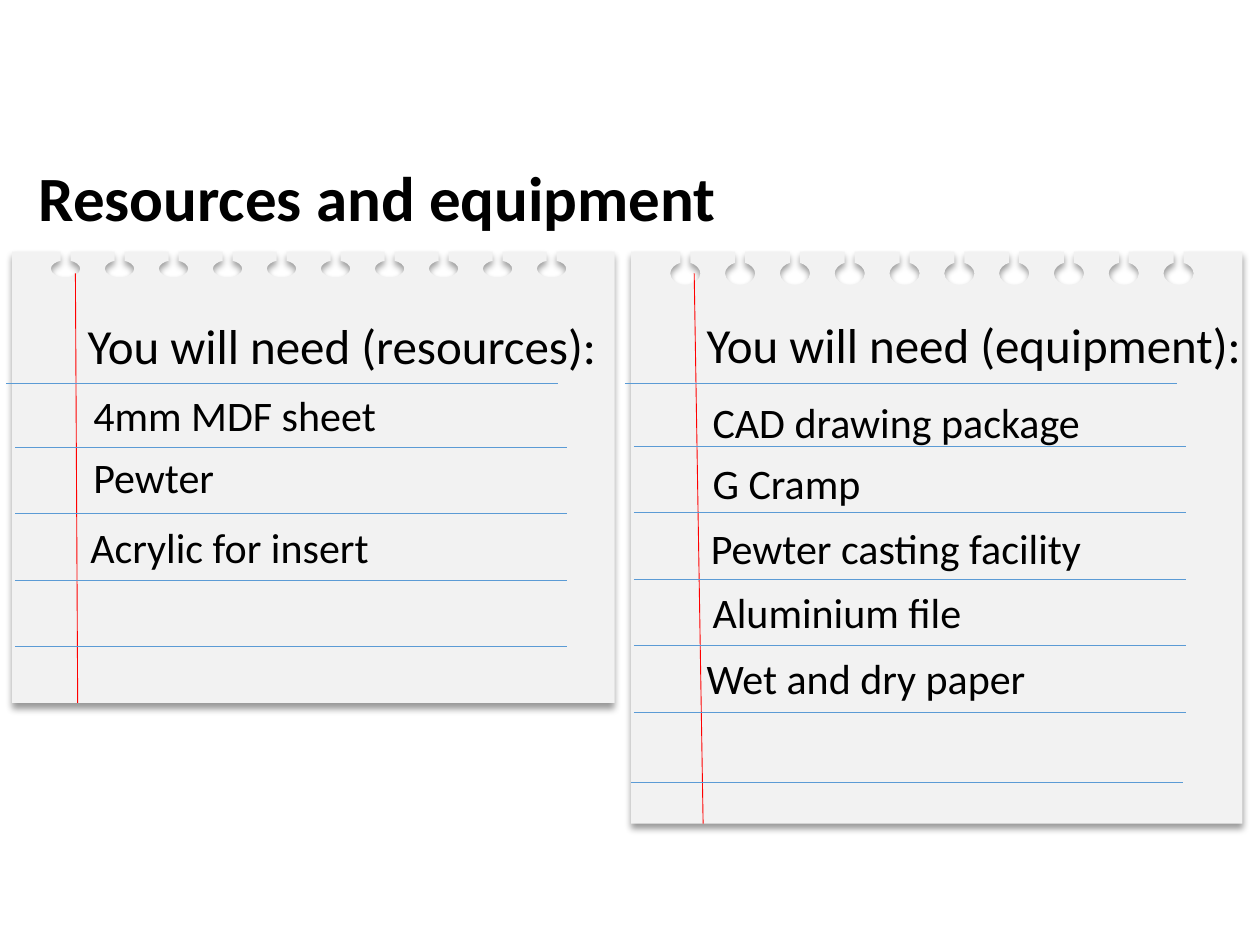
from pptx import Presentation
from pptx import util as u
from pptx.dml.color import RGBColor
from pptx.enum import shapes, text
from pptx.oxml import parse_xml
from pptx.oxml.ns import nsdecls, qn

BLACK = RGBColor(0, 0, 0)
PAPER = RGBColor(0xF2, 0xF2, 0xF2)
RULE = RGBColor(0x5B, 0x9B, 0xD5)
MARGIN = RGBColor(0xFF, 0, 0)
Pt = u.Pt

SHADOW = (
    f'<a:outerShdw {nsdecls("a")} blurRad="50800" dist="38100" dir="5400000" '
    'algn="t" rotWithShape="0"><a:srgbClr val="000000">'
    '<a:alpha val="40000"/></a:srgbClr></a:outerShdw>'
)
HALF_HOLE = [(-0.68, -0.81), (-1, -0.44), (-1, 0), (-1, 0.55), (-0.55, 1)]
NECK = 2.85
NECK_END = -0.94
HOLE_POINTS = 15


def write(tf, content, size=24, bold=False, color=BLACK, font="Calibri", spacing=None):
    p = tf.paragraphs[0]
    p.alignment = text.PP_ALIGN.LEFT
    p.line_spacing = spacing
    r = p.add_run()
    r.text = content
    r.font.name = font
    r.font.size = Pt(size)
    r.font.bold = bold
    r.font.color.rgb = color


def hole_points(cx, cy, rx, ry, top):
    mirrored = [(-x, y) for x, y in reversed(HALF_HOLE)]
    arc = [(cx + x * rx, cy + y * ry) for x, y in HALF_HOLE + [(0, 1)] + mirrored]
    neck_y = cy + NECK_END * ry
    left, right = cx - NECK, cx + NECK
    return [(left, top), (left, neck_y), *arc, (right, neck_y), (right, top)]


def curve_holes(sp, holes):
    lines = list(sp._element.iter(qn("a:lnTo")))
    for i in range(holes):
        start = i * HOLE_POINTS + 2
        for j in range(start, start + 12, 3):
            curve = parse_xml(f'<a:cubicBezTo {nsdecls("a")}/>')
            lines[j].addprevious(curve)
            for line in lines[j:j + 3]:
                curve.append(line[0])
                line.getparent().remove(line)


class Notepad:
    line_width = 0.5
    top = 143.8
    holes = 10

    def __init__(self, slide):
        self.s = slide
        self.group = None

    def title(self, content, x, y, w, h):
        sp = self.s.shapes.title
        sp.left, sp.top, sp.width, sp.height = Pt(x), Pt(y), Pt(w), Pt(h)
        tf = sp.text_frame
        tf.word_wrap = True
        tf.auto_size = text.MSO_AUTO_SIZE.NONE
        tf.vertical_anchor = text.MSO_ANCHOR.MIDDLE
        write(tf, content, size=36, bold=True, spacing=0.9)

    def page(self, x, w, h, first, pitch, cy, rx, ry):
        self.group = self.s.shapes.add_group_shape()
        points = []
        for i in range(self.holes):
            points += hole_points(first + i * pitch, cy, rx, ry, self.top)
        bottom = self.top + h
        points += [(x + w, self.top), (x + w, bottom), (x, bottom)]
        fb = self.group.shapes.build_freeform(Pt(x), Pt(self.top))
        fb.add_line_segments([(Pt(px), Pt(py)) for px, py in points], close=True)
        sp = fb.convert_to_shape()
        curve_holes(sp, self.holes)
        sp.fill.solid()
        sp.fill.fore_color.rgb = PAPER
        sp.line.fill.background()
        sp.shadow.inherit = False
        sp._element.spPr.find(qn("a:effectLst")).append(parse_xml(SHADOW))

    def line(self, x1, y1, x2, y2, color):
        c = self.group.shapes.add_connector(
            shapes.MSO_CONNECTOR.STRAIGHT, Pt(x1), Pt(y1), Pt(x2), Pt(y2))
        c.line.color.rgb = color
        c.line.width = Pt(self.line_width)
        c._element.spPr.append(parse_xml(f'<a:effectLst {nsdecls("a")}/>'))

    def rule(self, x, y, w=315.4):
        self.line(x, y, x + w, y, RULE)

    def note(self, content, x, y, w=275.8, h=35.3, **style):
        tf = self.group.shapes.add_textbox(Pt(x), Pt(y), Pt(w), Pt(h)).text_frame
        tf.word_wrap = True
        tf.auto_size = text.MSO_AUTO_SIZE.SHAPE_TO_FIT_TEXT
        write(tf, content, **style)


PAGES = [
    dict(
        page=dict(x=6.9, w=344.4, h=257.8, first=37.5, pitch=30.86,
                  cy=153.6, rx=8.4, ry=4.9),
        margin=(43.1, 156.2, 44.4, 401.6),
        rules=[(3.6, 219.4)] + [(8.6, 255.6 + 38 * i) for i in range(4)],
        heading=("You will need (resources):", 43, 176.7),
        items=[("4mm MDF sheet", 46.3, 218.9, 256.3),
               ("Pewter", 46.3, 254.6, 256.3),
               ("Acrylic for insert", 44.6, 294.5)],
    ),
    dict(
        page=dict(x=360.7, w=349.2, h=326.9, first=391.6, pitch=31.32,
                  cy=156.3, rx=8.6, ry=6.5),
        margin=(396.7, 156.2, 401.8, 470.7),
        rules=[(357.1, 219)] + [(362.2, 254.95 + 38 * i) for i in range(5)]
        + [(360.7, 447.1)],
        heading=("You will need (equipment):", 396.7, 176.4),
        items=[("CAD drawing package", 400.1, 223.2, 256.3),
               ("G Cramp", 400.1, 257.8, 256.3),
               ("Pewter casting facility", 399.1, 295.2),
               ("Aluminium file", 400.1, 331.7),
               ("Wet and dry paper", 396.7, 369.4)],
    ),
]


def main():
    prs = Presentation()
    prs.slide_width, prs.slide_height = Pt(720), Pt(540)
    pad = Notepad(prs.slides.add_slide(prs.slide_layouts[5]))
    pad.title("Resources and equipment", 14.8, 86.4, 532.8, 56.9)
    for sheet in PAGES:
        pad.page(**sheet["page"])
        pad.line(*sheet["margin"], MARGIN)
        for x, y in sheet["rules"]:
            pad.rule(x, y)
        pad.note(*sheet["heading"], w=344.2, h=41, size=28)
        for item in sheet["items"]:
            pad.note(*item)
    prs.save("out.pptx")


if __name__ == "__main__":
    main()
